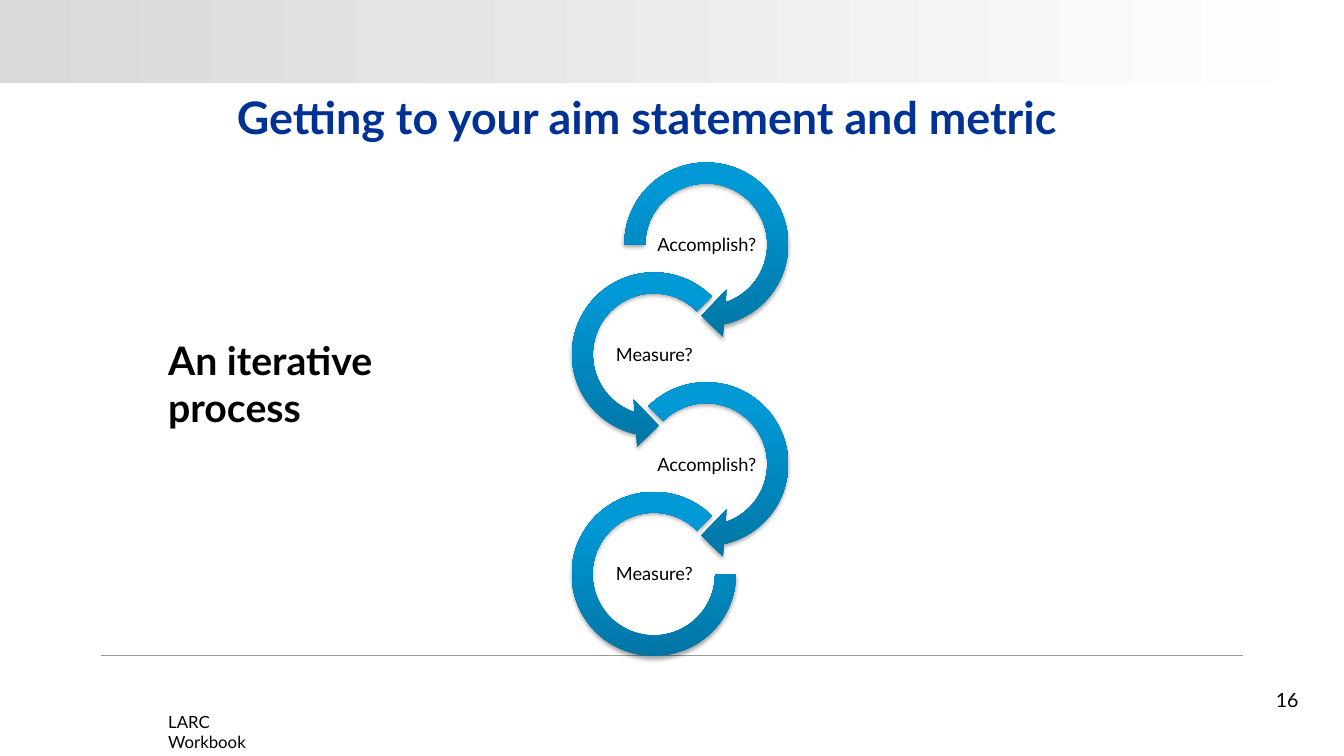
from dataclasses import dataclass
from lxml.etree import SubElement
from pptx import Presentation
from pptx.dml.color import RGBColor as Rgb
from pptx.enum.shapes import MSO_CONNECTOR as Link, MSO_SHAPE as Geo
from pptx.enum.text import MSO_ANCHOR as Anchor, PP_ALIGN as Align
from pptx.oxml import parse_xml
from pptx.oxml.ns import nsdecls, qn
from pptx.util import Inches, Pt

SHADOW = (
    f'<a:effectLst {nsdecls("a")}>'
    '<a:outerShdw blurRad="40000" dist="23000" dir="5400000" rotWithShape="0">'
    '<a:srgbClr val="000000"><a:alpha val="35000"/></a:srgbClr>'
    '</a:outerShdw></a:effectLst>'
)


@dataclass(frozen=True)
class Theme:
    font: str = "Lato"
    ink: str = "000000"
    navy: str = "003296"
    rule: str = "999999"
    band: tuple = ((0, "D9D9D9"), (1, "FFFFFF"))
    ring: tuple = ((0, "0075A4"), (0.8, "0098D5"))
    title: int = 32
    lead: int = 28
    page: int = 14
    label: int = 13
    foot: int = 12


class Deck:
    def __init__(self, theme):
        self.theme = theme
        self.file = Presentation()
        self.file.slide_width = Inches(13.33)
        self.file.slide_height = Inches(7.5)
        self.slide = self.file.slides.add_slide(self.file.slide_layouts[6])

    def shape(self, kind, box, stops, angle, adjust=()):
        item = self.slide.shapes.add_shape(kind, *map(Inches, box))
        item.shadow.inherit = False
        item.line.fill.background()
        item.fill.gradient()
        item.fill.gradient_angle = angle
        for stop, (place, color) in zip(item.fill.gradient_stops, stops):
            stop.position = place
            stop.color.rgb = Rgb.from_string(color)
        for index, value in enumerate(adjust):
            item.adjustments[index] = value
        return item

    def ring(self, kind, box, adjust):
        item = self.shape(kind, box, self.theme.ring, 90, adjust)
        props = item._element.spPr
        props.replace(props.find(qn("a:effectLst")), parse_xml(SHADOW))

    def line(self, start, end):
        item = self.slide.shapes.add_connector(
            Link.STRAIGHT, *map(Inches, start + end))
        item.line.color.rgb = Rgb.from_string(self.theme.rule)
        item.line.width = Pt(1)
        SubElement(item._element.spPr, qn("a:effectLst"))

    def text(self, words, box, size, color=None, bold=False, inset=(0.1, 0.05),
             anchor=Anchor.TOP, align=Align.LEFT, space=1.0):
        frame = self.slide.shapes.add_textbox(*map(Inches, box)).text_frame
        para = frame.paragraphs[0]
        para.text = words
        across, down = map(Inches, inset)
        style = {
            frame: {"word_wrap": True, "vertical_anchor": anchor,
                    "margin_left": across, "margin_right": across,
                    "margin_top": down, "margin_bottom": down},
            para: {"alignment": align, "line_spacing": space},
            para.runs[0].font: {"name": self.theme.font, "size": Pt(size),
                                "bold": bold},
        }
        for target, values in style.items():
            for name, value in values.items():
                setattr(target, name, value)
        para.runs[0].font.color.rgb = Rgb.from_string(color or self.theme.ink)


def main():
    theme = Theme()
    deck = Deck(theme)
    deck.shape(Geo.RECTANGLE, (0, 0, 13.33, 0.82), theme.band, 0)
    deck.line((1, 6.5), (12.33, 6.5))

    right, left = 6.06, 5.54
    top, step, size, trim = 1.48, 1.09, 1.89, 0.13
    steps = [
        ("Accomplish?", right, Geo.CIRCULAR_ARROW, 0,
         (0.11, 11.42, 45, 108, 0.125)),
        ("Measure?", left, Geo.LEFT_CIRCULAR_ARROW, 0,
         (0.11, 11.42, 63, 189, 0.125)),
        ("Accomplish?", right, Geo.CIRCULAR_ARROW, 0,
         (0.11, 11.42, 45, 135, 0.125)),
        ("Measure?", left, Geo.BLOCK_ARC, trim, (0, 189, 0.127)),
    ]
    for row, (words, x, kind, pad, adjust) in enumerate(steps):
        y = top + row * step
        side = size - 2 * pad
        deck.ring(kind, (x + pad, y + pad, side, side), adjust)
        deck.text(words, (x + 0.42, y + 0.69, 1.06, 0.53), theme.label,
                  inset=(0.01, 0.01), anchor=Anchor.MIDDLE,
                  align=Align.CENTER, space=0.9)

    deck.text("An iterative process", (1.57, 3.29, 3.42, 0.57), theme.lead,
              bold=True)
    deck.text("Getting to your aim statement and metric",
              (2.35, 0.92, 8.8, 0.62), theme.title, theme.navy, True,
              inset=(0, 0.05), space=0.85)
    deck.text("16", (9.88, 6.76, 3, 0.4), theme.page, inset=(0, 0.05),
              anchor=Anchor.MIDDLE, align=Align.RIGHT, space=0.9)
    deck.text("LARC Workbook", (1.57, 7.01, 1.39, 0.3), theme.foot)
    deck.file.save("out.pptx")


if __name__ == "__main__":
    main()
